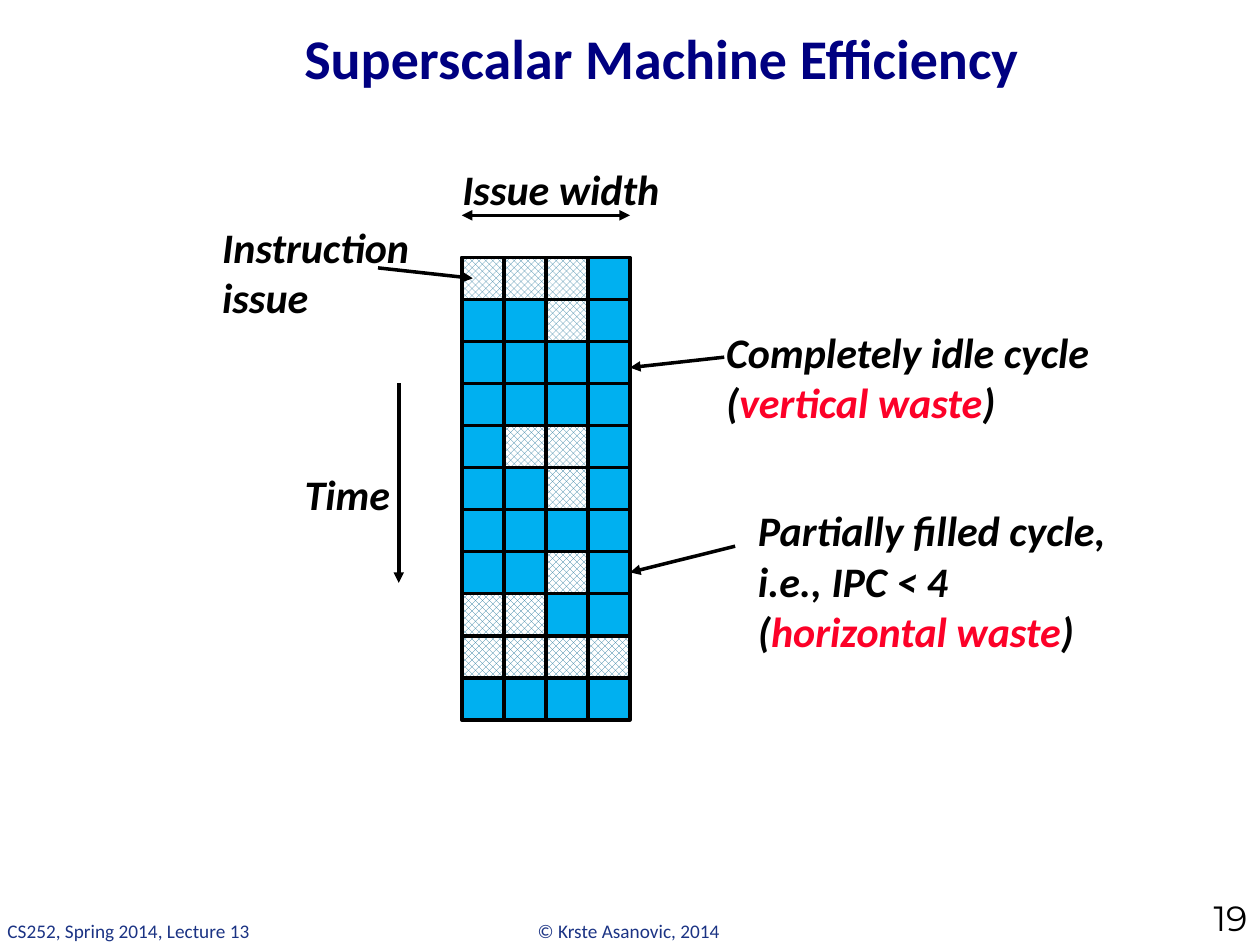
from dataclasses import dataclass

from lxml.etree import SubElement
from pptx import Presentation
from pptx.dml.color import RGBColor
from pptx.enum.dml import MSO_PATTERN
from pptx.enum.shapes import MSO_CONNECTOR, MSO_SHAPE
from pptx.enum.text import MSO_ANCHOR, PP_ALIGN
from pptx.oxml.ns import qn
from pptx.util import Cm, Pt


@dataclass(frozen=True)
class Theme:
    ink: str = "000000"
    paper: str = "FFFFFF"
    heading: str = "000081"
    footer: str = "1B3384"
    waste: str = "FC0128"
    idle: str = "00B0F0"
    issued: str = "2C7C9F"
    body_font: str = "Calibri"
    number_font: str = "Montserrat"
    heading_size: int = 32
    label_size: int = 24
    number_size: int = 20
    footer_size: int = 11
    line_width: int = 2


class Diagram:
    def __init__(self, slide, theme):
        self.shapes = slide.shapes
        self.theme = theme

    def apply(self, target, values):
        for name, value in values.items():
            setattr(target, name, value)

    def paint(self, color_format, color):
        color_format.rgb = RGBColor.from_string(color)

    def text(self, box, paragraphs, color, font, align=PP_ALIGN.LEFT, **frame_format):
        frame = self.shapes.add_textbox(*map(Cm, box)).text_frame
        self.apply(frame, {"word_wrap": True, **frame_format})
        for index, runs in enumerate(paragraphs):
            paragraph = frame.add_paragraph() if index else frame.paragraphs[0]
            paragraph.alignment = align
            for words, run_color in runs:
                run = paragraph.add_run()
                run.text = words
                self.apply(run.font, font)
                self.paint(run.font.color, run_color or color)

    def label(self, box, *paragraphs, wrap=True):
        font = {"name": self.theme.body_font, "size": Pt(self.theme.label_size),
                "bold": True, "italic": True}
        self.text(box, paragraphs, self.theme.ink, font, word_wrap=wrap)

    def footer(self, box, words):
        font = {"name": self.theme.body_font, "size": Pt(self.theme.footer_size)}
        self.text(box, [[(words, None)]], self.theme.footer, font, word_wrap=False)

    def outline(self, line):
        line.width = Pt(self.theme.line_width)
        self.paint(line.color, self.theme.ink)

    def slot(self, left, top, side, issued):
        square = self.shapes.add_shape(
            MSO_SHAPE.RECTANGLE, Cm(left), Cm(top), Cm(side), Cm(side))
        square.shadow.inherit = False
        if issued:
            square.fill.patterned()
            square.fill.pattern = MSO_PATTERN.SOLID_DIAMOND
            self.paint(square.fill.fore_color, self.theme.issued)
            self.paint(square.fill.back_color, self.theme.paper)
        else:
            square.fill.solid()
            self.paint(square.fill.fore_color, self.theme.idle)
        self.outline(square.line)

    def arrow(self, start, end, ends=("tailEnd",)):
        connector = self.shapes.add_connector(
            MSO_CONNECTOR.STRAIGHT, *map(Cm, (*start, *end)))
        self.outline(connector.line)
        properties = connector.line._get_or_add_ln()
        for tag in ends:
            SubElement(properties, qn(f"a:{tag}"), type="triangle")
        SubElement(connector._element.spPr, qn("a:effectLst"))


ISSUE_SLOTS = (
    "###.",
    "..#.",
    "....",
    "....",
    ".##.",
    "..#.",
    "....",
    "..#.",
    "##..",
    "####",
    "....",
)
GRID_LEFT, GRID_TOP, ISSUE_WIDTH = 9.31, 5.19, 3.39


def main():
    theme = Theme()
    presentation = Presentation()
    presentation.slide_width, presentation.slide_height = Cm(25.4), Cm(19.05)
    slide = presentation.slides.add_slide(presentation.slide_layouts[6])
    diagram = Diagram(slide, theme)

    diagram.footer((10.59, 18.41, 4.24, 0.74), "© Krste Asanovic, 2014")
    diagram.footer((-0.1, 18.41, 5.44, 0.74), "CS252, Spring 2014, Lecture 13")
    diagram.text(
        (3.39, 0.2, 19.9, 1.9), [[("Superscalar Machine Efficiency", None)]],
        theme.heading,
        {"name": theme.body_font, "size": Pt(theme.heading_size), "bold": True},
        PP_ALIGN.CENTER, vertical_anchor=MSO_ANCHOR.MIDDLE)
    diagram.text(
        (23.07, 18.4, 2.33, 0.65), [[("19", None)]], theme.ink,
        {"name": theme.number_font, "size": Pt(theme.number_size)},
        PP_ALIGN.RIGHT, vertical_anchor=MSO_ANCHOR.BOTTOM)

    diagram.label((9.07, 3.18, 4.72, 1.28), [("Issue width", None)], wrap=False)
    side = ISSUE_WIDTH / len(ISSUE_SLOTS[0])
    for cycle, slots in enumerate(ISSUE_SLOTS):
        for position, mark in enumerate(slots):
            diagram.slot(GRID_LEFT + position * side, GRID_TOP + cycle * side,
                         side, mark == "#")

    grid_right = GRID_LEFT + ISSUE_WIDTH
    diagram.arrow((GRID_LEFT, 4.34), (grid_right, 4.34), ("headEnd", "tailEnd"))
    diagram.arrow((8.04, 7.73), (8.04, 11.75))
    diagram.label((5.89, 9.32, 2.46, 1.28), [("Time", None)], wrap=False)

    diagram.arrow((14.6, 7.2), (grid_right, 7.41))
    diagram.label(
        (14.39, 6.45, 10.16, 2.31),
        [("Completely idle cycle (", None), ("vertical waste", theme.waste), (")", None)])
    diagram.arrow((7.62, 5.4), (9.53, 5.61))
    diagram.label((4.23, 4.34, 4.7, 2.31), [("Instruction issue", None)])
    diagram.arrow((14.82, 11.01), (grid_right, 11.54))
    diagram.label(
        (15.03, 10.05, 8.68, 3.33),
        [("Partially filled cycle, i.e., IPC < 4", None)],
        [("(", None), ("horizontal waste", theme.waste), (")", None)])

    presentation.save("out.pptx")


if __name__ == "__main__":
    main()
